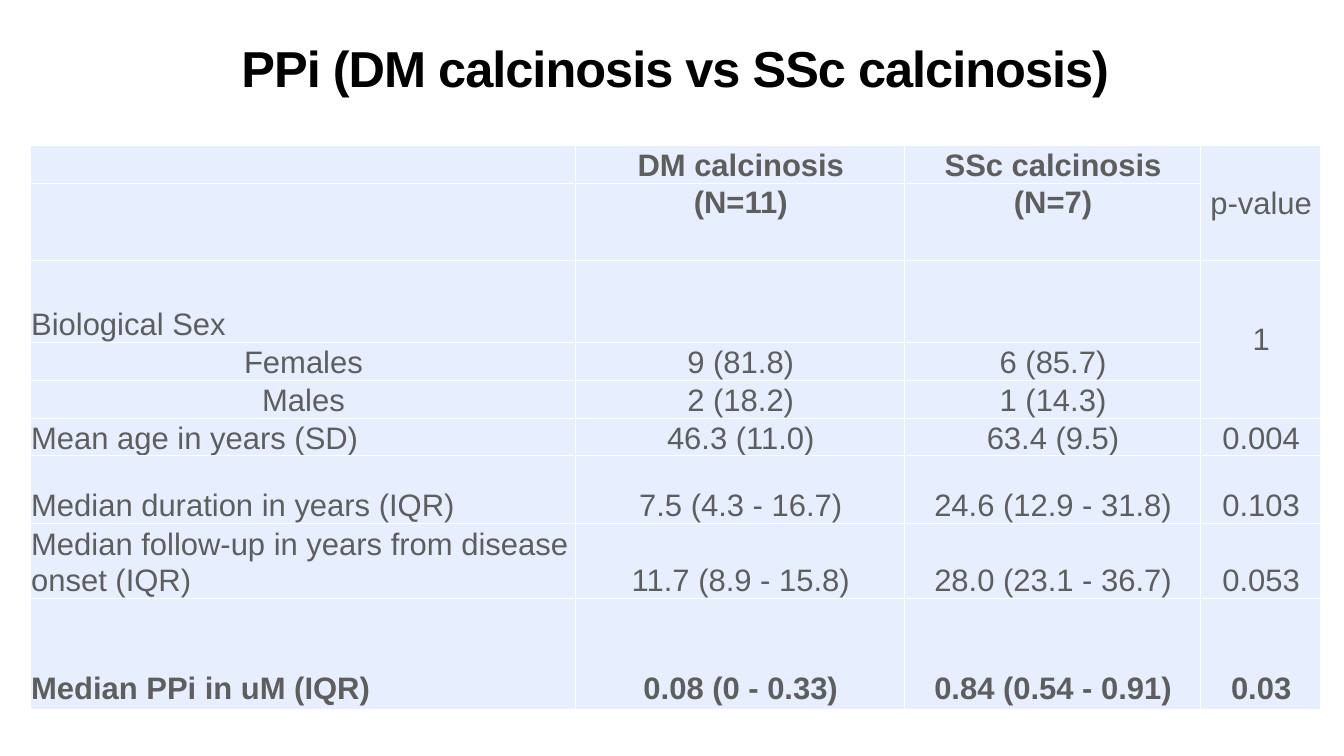
from dataclasses import dataclass

from lxml.etree import SubElement
from pptx import Presentation
from pptx.dml.color import RGBColor
from pptx.enum.text import MSO_ANCHOR as ANCHOR, PP_ALIGN as ALIGN
from pptx.oxml.ns import qn
from pptx.util import Inches, Pt


@dataclass(frozen=True)
class Theme:
    font: str = "Arial"
    title: str = "000000"
    text: str = "5E5E5E"
    cell: str = "E7EFFF"
    border: str = "FFFFFF"
    title_size: float = 59.5
    cell_size: float = 36.5
    line: float = 43


THEME = Theme()
WIDTH, HEIGHT = 21.99, 12.37
COLS = [8.93, 5.38, 4.84, 1.97]
ROW = 0.62
ROWS = [ROW, 1.26, 1.34, ROW, ROW, ROW, 1.1, 1.23, 1.82]
DATA = [
    ["", "DM calcinosis", "SSc calcinosis", "p-value"],
    ["", "(N=11)", "(N=7)", ""],
    ["Biological Sex", "", "", "1"],
    ["Females", "9 (81.8)", "6 (85.7)", ""],
    ["Males", "2 (18.2)", "1 (14.3)", ""],
    ["Mean age in years (SD)", "46.3 (11.0)", "63.4 (9.5)", "0.004"],
    ["Median duration in years (IQR)", "7.5 (4.3 - 16.7)",
     "24.6 (12.9 - 31.8)", "0.103"],
    ["Median follow-up in years from disease onset (IQR)",
     "11.7 (8.9 - 15.8)", "28.0 (23.1 - 36.7)", "0.053"],
    ["Median PPi in uM (IQR)", "0.08 (0 - 0.33)", "0.84 (0.54 - 0.91)", "0.03"],
]
SUBGROUPS = ("Females", "Males")
P_COL, N_ROW, PPI_ROW = 3, 1, 8
MERGES = [(0, 1), (2, 4)]  # first and last row of each shared p-value


def style_run(r, size, color, bold):
    r.font.name = THEME.font
    r.font.size = Pt(size)
    r.font.bold = bold
    r.font.color.rgb = RGBColor.from_string(color)


def style_cell(cell):
    """White borders, pale fill and tight margins."""
    tc_pr = cell._tc.get_or_add_tcPr()
    for side in ("lnL", "lnR", "lnT", "lnB"):
        ln = SubElement(tc_pr, qn(f"a:{side}"), w=str(Pt(1)))
        fill = SubElement(ln, qn("a:solidFill"))
        SubElement(fill, qn("a:srgbClr"), val=THEME.border)
    cell.fill.solid()
    cell.fill.fore_color.rgb = RGBColor.from_string(THEME.cell)
    cell.margin_left = Inches(0.02)
    cell.margin_right = cell.margin_top = cell.margin_bottom = 0


def write_cell(cell, text, row, col):
    p = cell.text_frame.paragraphs[0]
    p.text = text
    label = col == 0 and text not in SUBGROUPS
    p.alignment = ALIGN.LEFT if label else ALIGN.CENTER
    p.line_spacing = Pt(THEME.line)
    bold = row == PPI_ROW or (row <= N_ROW and col != P_COL)
    style_run(p.runs[0], THEME.cell_size, THEME.text, bold)
    cell.vertical_anchor = ANCHOR.TOP if row == N_ROW else ANCHOR.BOTTOM
    if row == PPI_ROW:
        cell.margin_bottom = Inches(0.06)
    if cell.is_merge_origin:
        cell.vertical_anchor = ANCHOR.MIDDLE


def add_title(s, left, top, width, height):
    tf = s.shapes.add_textbox(*map(Inches, (left, top, width, height))).text_frame
    tf.word_wrap = True
    tf.vertical_anchor = ANCHOR.MIDDLE
    p = tf.paragraphs[0]
    p.text = "PPi (DM calcinosis vs SSc calcinosis)"
    p.alignment = ALIGN.CENTER
    r = p.runs[0]
    style_run(r, THEME.title_size, THEME.title, True)
    r.font._element.set("spc", "-120")


def add_results(s, left, top):
    box = map(Inches, (left, top, sum(COLS), sum(ROWS)))
    table = s.shapes.add_table(len(ROWS), len(COLS), *box).table
    for column, width in zip(table.columns, COLS):
        column.width = Inches(width)
    for row, height in zip(table.rows, ROWS):
        row.height = Inches(height)
    for first, last in MERGES:
        table.cell(first, P_COL).merge(table.cell(last, P_COL))
    for i, values in enumerate(DATA):
        for j, text in enumerate(values):
            cell = table.cell(i, j)
            style_cell(cell)
            if text:
                write_cell(cell, text, i, j)


def main():
    prs = Presentation()
    prs.slide_width, prs.slide_height = Inches(WIDTH), Inches(HEIGHT)
    s = prs.slides.add_slide(prs.slide_layouts[6])
    add_title(s, 2.4, 0.55, 17.3, 1.1)
    add_results(s, 0.49, 2.38)
    prs.save("out.pptx")


if __name__ == "__main__":
    main()
